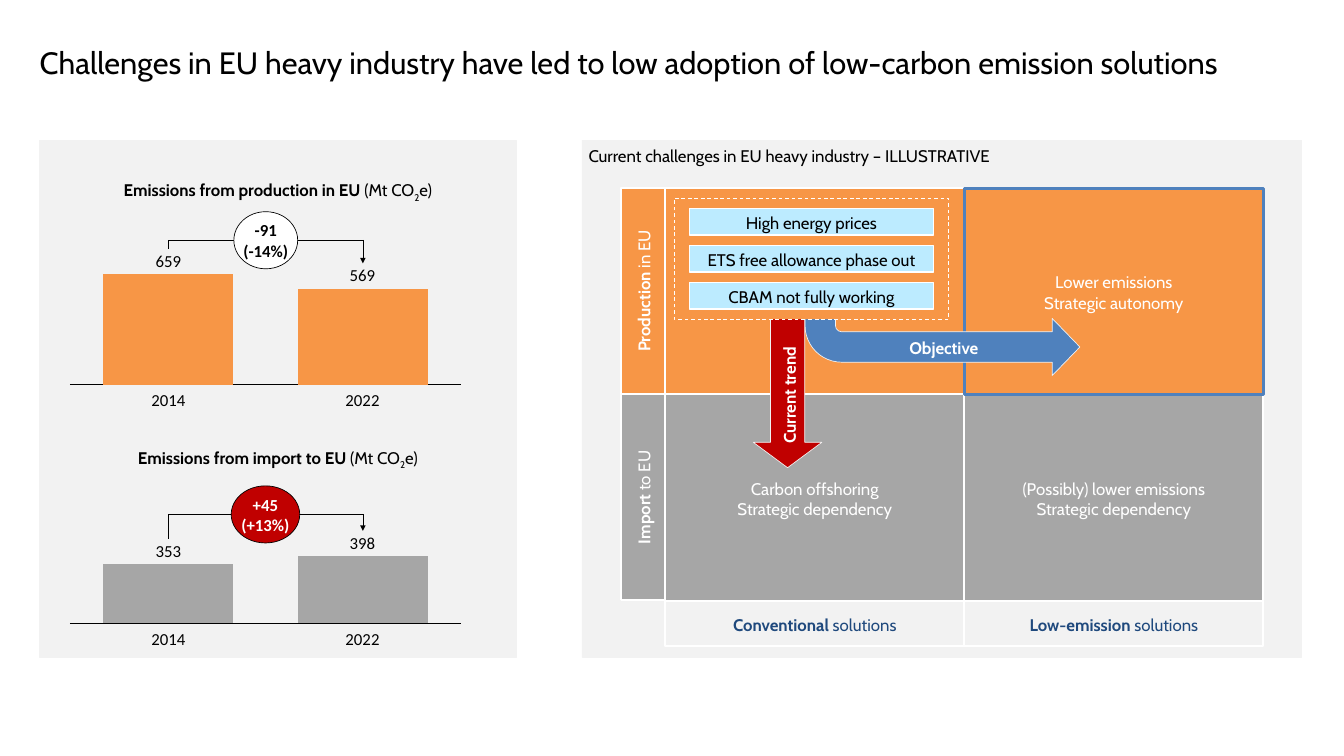
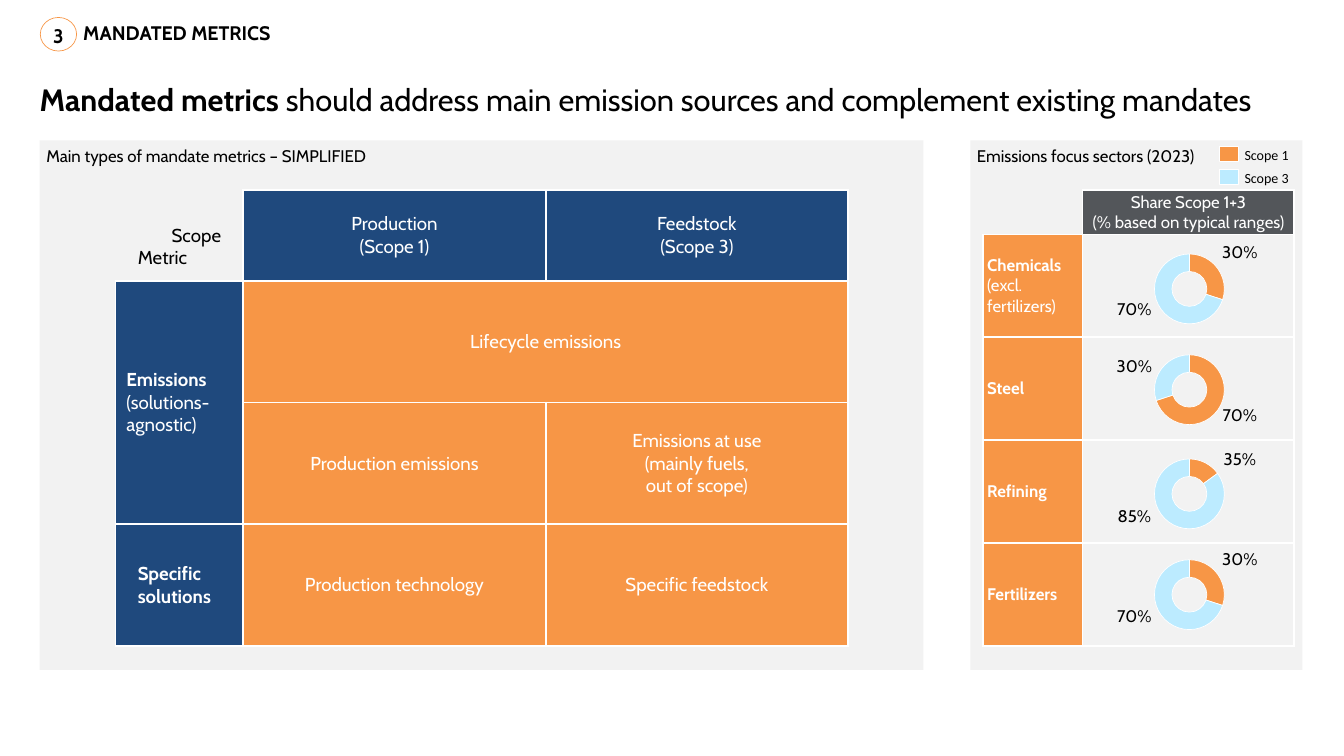
"""Build two slides on emissions in EU heavy industry and on mandated metrics."""
import lxml.etree
import pptx
import pptx.chart.data
import pptx.dml.color
import pptx.enum.chart
import pptx.enum.dml
import pptx.enum.shapes
import pptx.enum.text
import pptx.oxml.ns
import pptx.util

EMU_PER_PX = 9144
RGB = pptx.dml.color.RGBColor
BLACK = RGB(0x00, 0x00, 0x00)
WHITE = RGB(0xFF, 0xFF, 0xFF)
PANEL = RGB(0xF2, 0xF2, 0xF2)
ORANGE = RGB(0xF7, 0x96, 0x46)
GRAY = RGB(0xA6, 0xA6, 0xA6)
DARK_GRAY = RGB(0x53, 0x56, 0x5A)
NAVY = RGB(0x1F, 0x49, 0x7D)
BLUE = RGB(0x4F, 0x81, 0xBD)
SKY = RGB(0xBC, 0xEB, 0xFF)
RED = RGB(0xC0, 0x00, 0x00)
HEADING_FONT = "Cabin"
CHART_FONT = "Calibri"

SHAPE = pptx.enum.shapes.MSO_SHAPE
LEFT = pptx.enum.text.PP_ALIGN.LEFT
CENTER = pptx.enum.text.PP_ALIGN.CENTER
RIGHT = pptx.enum.text.PP_ALIGN.RIGHT
TOP = pptx.enum.text.MSO_ANCHOR.TOP
MIDDLE = pptx.enum.text.MSO_ANCHOR.MIDDLE
BOTTOM = pptx.enum.text.MSO_ANCHOR.BOTTOM
NO_INSETS = (0, 0, 0, 0)
BOX_INSETS = (10, 8, 10, 5)
WIDE_INSETS = (33, 17, 33, 17)


def px(*lengths):
    return [pptx.util.Emu(round(length * EMU_PER_PX)) for length in lengths]


def qn(tag):
    return pptx.oxml.ns.qn(tag)


def write_text(frame, text, size=18, color=BLACK, font=HEADING_FONT, align=LEFT, spacing=None):
    """Write lines as paragraphs; *stars* mark bold and _underscores_ mark subscript."""
    for row, line in enumerate(text.split("\n")):
        para = frame.add_paragraph() if row else frame.paragraphs[0]
        para.alignment = align
        if spacing:
            para.line_spacing = spacing
        for part_number, part in enumerate(line.split("*")):
            for piece_number, piece in enumerate(part.split("_")):
                if not piece:
                    continue
                span = para.add_run()
                span.text = piece
                span.font.size = pptx.util.Pt(size)
                span.font.name = font
                span.font.color.rgb = color
                span.font.bold = part_number % 2 == 1
                if piece_number % 2:
                    span.font._element.set("baseline", "-25000")


def set_insets(holder, insets):
    (holder.margin_left, holder.margin_top,
     holder.margin_right, holder.margin_bottom) = px(*insets)


def set_frame(frame, text, anchor, insets, wrap, **text_format):
    frame.word_wrap = wrap
    frame.vertical_anchor = anchor
    set_insets(frame, insets)
    write_text(frame, text, **text_format)


def add_label(page, place, text, anchor=TOP, insets=(10, 5, 10, 5), wrap=True, turn=0,
              **text_format):
    box = page.shapes.add_textbox(*px(*place))
    box.rotation = turn
    set_frame(box.text_frame, text, anchor, insets, wrap, **text_format)


def add_box(page, place, text="", kind=SHAPE.RECTANGLE, fill=None, line=None, weight=0.75,
            turn=0, anchor=MIDDLE, align=CENTER, insets=BOX_INSETS, wrap=True, **text_format):
    box = page.shapes.add_shape(kind, *px(*place))
    box.shadow.inherit = False
    box.rotation = turn
    if fill is None:
        box.fill.background()
    else:
        box.fill.solid()
        box.fill.fore_color.rgb = fill
    if line is None:
        box.line.fill.background()
    else:
        box.line.color.rgb = line
        box.line.width = pptx.util.Pt(weight)
    if text:
        set_frame(box.text_frame, text, anchor, insets, wrap, align=align, **text_format)
    return box


def add_panel(page, place, text="", line=None):
    add_box(page, place, text, fill=PANEL, line=line, anchor=TOP, align=LEFT)


def add_title(page, text, top):
    add_label(page, (59, top, 1879, 83), text, insets=NO_INSETS, size=33)


def add_line(page, start, end, arrow=False):
    connector = page.shapes.add_connector(
        pptx.enum.shapes.MSO_CONNECTOR.STRAIGHT, *px(*start, *end))
    connector.line.color.rgb = BLACK
    connector.line.width = pptx.util.Pt(0.5)
    properties = connector.element.spPr
    if arrow:
        lxml.etree.SubElement(properties.find(qn("a:ln")), qn("a:tailEnd"), type="triangle")
    lxml.etree.SubElement(properties, qn("a:effectLst"))


def add_chart(page, place, kind, categories, values, plot_place):
    data = pptx.chart.data.CategoryChartData()
    data.categories = categories
    data.add_series("Series 1", values)
    chart = page.shapes.add_chart(kind, *px(*place), data).chart
    chart.has_title = False
    chart.has_legend = False
    chart.font.size = pptx.util.Pt(10)
    chart.font.name = CHART_FONT
    chart.font.color.rgb = BLACK
    area = chart.element.find(".//" + qn("c:plotArea"))
    for old in area.findall(qn("c:layout")):
        area.remove(old)
    layout = lxml.etree.Element(qn("c:layout"))
    manual = lxml.etree.SubElement(layout, qn("c:manualLayout"))
    settings = [("layoutTarget", "inner"), ("xMode", "edge"), ("yMode", "edge"),
                *zip("xywh", plot_place)]
    for name, value in settings:
        lxml.etree.SubElement(manual, qn("c:" + name), val=str(value))
    area.insert(0, layout)
    return chart


def add_bars(page, top, values, highest, color):
    chart = add_chart(page, (92, top, 606, 192), pptx.enum.chart.XL_CHART_TYPE.COLUMN_STACKED,
                      ["1", "2"], values, (0.02, 0.07, 0.96, 0.86))
    plot = chart.plots[0]
    plot.gap_width, plot.overlap, plot.vary_by_categories = 50, 100, False
    fill = plot.series[0].format.fill
    fill.solid()
    fill.fore_color.rgb = color
    scale = chart.value_axis
    scale.minimum_scale, scale.maximum_scale = 0, highest
    scale.has_major_gridlines = False
    scale.visible = False
    axis = chart.category_axis
    axis.tick_label_position = pptx.enum.chart.XL_TICK_LABEL_POSITION.NONE
    axis.major_tick_mark = pptx.enum.chart.XL_TICK_MARK.NONE
    axis.format.line.color.rgb = BLACK
    axis.format.line.width = pptx.util.Pt(0.75)


def add_doughnut(page, top, shares):
    chart = add_chart(page, (1705, top, 130, 130), pptx.enum.chart.XL_CHART_TYPE.DOUGHNUT,
                      ["1", "2", "3"], (shares[0], None, shares[1]), (0.1, 0.1, 0.8, 0.8))
    plot = chart.plots[0]
    plot.has_data_labels = False
    plot.vary_by_categories = False
    for index, color in ((0, ORANGE), (2, SKY)):
        look = plot.series[0].points[index].format
        look.fill.solid()
        look.fill.fore_color.rgb = color
        look.line.color.rgb = WHITE
        look.line.width = pptx.util.Pt(0.75)


def add_emissions(page, heading, heading_top, chart_top, bar_values, highest, bar_color,
                  amounts, bridge, ends, change, oval_width, oval_fill, oval_text):
    add_bars(page, chart_top, bar_values, highest, bar_color)
    first, last = centers = (251, 540)
    add_line(page, (first, ends[0]), (first, bridge))
    add_line(page, (first, bridge), (last, bridge))
    add_line(page, (last, bridge), (last, ends[1]), arrow=True)
    for center, year, amount, end in zip(centers, ("2014", "2022"), amounts, ends):
        add_label(page, (center - 27, chart_top + 186, 53, 30), year, insets=NO_INSETS,
                  wrap=False, align=CENTER, font=CHART_FONT)
        add_label(page, (center - 24, end + 6, 47, 27), amount, BOTTOM, (4, 0, 4, 0),
                  wrap=False, align=CENTER, font=CHART_FONT, spacing=0.9)
    add_box(page, (395 - oval_width // 2, bridge - 42, oval_width, 85), change, SHAPE.OVAL,
            oval_fill, BLACK, insets=NO_INSETS, wrap=False, color=oval_text, font=CHART_FONT)
    add_label(page, (161, heading_top, 505, 40), heading, wrap=False, align=CENTER)


def add_matrix(page):
    left, top, width, height = 990, 280, 445, 307
    cells = [
        (0, 0, "", ORANGE, WHITE),
        (1, 1, "(Possibly) lower emissions\nStrategic dependency", GRAY, WHITE),
        (0, 1, "Carbon offshoring\nStrategic dependency", GRAY, WHITE),
        (0, 2, "*Conventional* solutions", PANEL, NAVY),
        (1, 2, "*Low-emission* solutions", PANEL, NAVY),
    ]
    for column, row, text, fill, color in cells:
        add_box(page, (left + column * width, top + row * height, width,
                       67 if row == 2 else height),
                text, fill=fill, line=WHITE, weight=2.25, color=color)
    for row, text, fill in ((1, "*Import* to EU", GRAY), (0, "*Production* in EU", ORANGE)):
        add_box(page, (803, 400 + row * height, height, 66), text, fill=fill, line=WHITE,
                weight=2.25, turn=270, color=WHITE)
    add_box(page, (left + width, top, width, height), "Lower emissions\nStrategic autonomy",
            fill=ORANGE, line=BLUE, weight=3, color=WHITE)


def add_arrows(page):
    objective = add_box(page, (1198, 426, 409, 133), kind=SHAPE.BENT_ARROW, fill=BLUE, line=PANEL)
    objective.element.spPr.find(qn("a:xfrm")).set("flipV", "1")
    trend = add_box(page, (1121, 445, 102, 251), kind=SHAPE.DOWN_ARROW, fill=RED, line=PANEL)
    for arrow, amounts in ((objective, (0.34, 0.32, 0.31, 0.41)), (trend, (0.5, 0.37))):
        for index, amount in enumerate(amounts):
            arrow.adjustments[index] = amount


def add_grid(page, place, columns, rows):
    table = page.shapes.add_table(len(rows), len(columns), *px(*place)).table
    table.first_row = table.horz_banding = False
    for column, width in zip(table.columns, px(*columns)):
        column.width = width
    for row, height in zip(table.rows, px(*rows)):
        row.height = height
    return table


def fill_cell(cell, text="", fill=None, insets=WIDE_INSETS, anchor=MIDDLE, sides="LRTB",
              **text_format):
    set_insets(cell, insets)
    cell.vertical_anchor = anchor
    if fill is None:
        cell.fill.background()
    else:
        cell.fill.solid()
        cell.fill.fore_color.rgb = fill
    for position, side in enumerate("LRTB"):
        border = lxml.etree.Element(qn("a:ln" + side), w=str(pptx.util.Pt(2.25)))
        paint = lxml.etree.SubElement(
            border, qn("a:solidFill" if side in sides else "a:noFill"))
        if side in sides:
            lxml.etree.SubElement(paint, qn("a:srgbClr"), val=str(WHITE))
        cell._tc.get_or_add_tcPr().insert(position, border)
    write_text(cell.text_frame, text, **text_format)


def add_metrics_table(page):
    table = add_grid(page, (172, 283, 1090, 678), (190, 450, 450), (135, 181, 181, 181))
    fill_cell(table.cell(0, 0), "Scope\nMetric", PANEL, anchor=BOTTOM, sides="RB", size=20)
    table.cell(0, 0).text_frame.paragraphs[0].alignment = RIGHT
    for row, text, insets in ((1, "*Emissions* (solutions-agnostic)", (16, 8, 16, 8)),
                              (2, "", WIDE_INSETS), (3, "*Specific solutions*", WIDE_INSETS)):
        fill_cell(table.cell(row, 0), text, NAVY, insets, size=20, color=WHITE)
    body = [("Production\n(Scope 1)", "Feedstock\n(Scope 3)"),
            ("Lifecycle emissions", ""),
            ("Production emissions", "Emissions at use\n(mainly fuels,\nout of scope)"),
            ("Production technology", "Specific feedstock")]
    for row, texts in enumerate(body):
        for column, text in enumerate(texts, 1):
            fill_cell(table.cell(row, column), text, ORANGE if row else NAVY, size=20,
                      color=WHITE, align=CENTER)
    table.cell(1, 0).merge(table.cell(2, 0))
    table.cell(1, 1).merge(table.cell(1, 2))


def add_sectors(page):
    sectors = [
        ("*Chemicals*\n(excl. fertilizers)", 365, (30, 70), ("30%", 353), ("70%", 438)),
        ("*Steel*", 515, (70, 30), ("70%", 596), ("30%", 524)),
        ("*Refining*", 670, (15, 85), ("35%", 662), ("85%", 747)),
        ("*Fertilizers*", 820, (30, 70), ("30%", 811), ("70%", 896)),
    ]
    insets = (6, 3, 6, 3)
    table = add_grid(page, (1463, 283, 463, 678), (148, 315), (66, 153, 153, 153, 153))
    fill_cell(table.cell(0, 0), sides="RB")
    fill_cell(table.cell(0, 1), "Share Scope 1+3\n(% based on typical ranges)", DARK_GRAY,
              insets, color=WHITE, align=CENTER)
    for row, (name, top, shares, right, left) in enumerate(sectors, 1):
        fill_cell(table.cell(row, 0), name, ORANGE, insets, color=WHITE)
        fill_cell(table.cell(row, 1), fill=PANEL)
        add_doughnut(page, top, shares)
        for x, (share, y) in ((1801, right), (1644, left)):
            add_label(page, (x, y, 88, 42), share, insets=(6, 6, 6, 6), align=CENTER)
    for row, (name, color) in enumerate((("Scope 1", ORANGE), ("Scope 3", SKY))):
        top = 218 + row * 34
        add_box(page, (1814, top, 29, 22), fill=color, line=WHITE)
        add_label(page, (1852, top, 66, 25), name, MIDDLE, NO_INSETS, wrap=False, size=15,
                  font=CHART_FONT)


def build_challenges(page):
    add_title(page, "Challenges in EU heavy industry have led to low adoption of "
                    "low-carbon emission solutions", 65)
    add_panel(page, (866, 209, 1071, 769),
              "Current challenges in EU heavy industry – ILLUSTRATIVE", PANEL)
    add_panel(page, (59, 209, 709, 769), line=PANEL)
    add_emissions(page, "*Emissions from production in EU* (Mt CO_2_e)", 263, 394, (100, 86), 100,
                  ORANGE, ("659", "569"), 357, (370, 392), "*-91*\n*(-14%)*", 95, WHITE, BLACK)
    add_emissions(page, "*Emissions from import to EU* (Mt CO_2_e)", 661, 749, (89, 100), 166,
                  GRAY, ("353", "398"), 765, (802, 790), "*+45*\n*(+13%)*", 102, RED, WHITE)
    add_matrix(page)
    add_arrows(page)
    frame = add_box(page, (1003, 295, 409, 180), fill=ORANGE, line=WHITE, weight=1)
    frame.line.dash_style = pptx.enum.dml.MSO_LINE.DASH
    hurdles = ("High energy prices", "ETS free allowance phase out", "CBAM not fully working")
    for row, hurdle in enumerate(hurdles):
        add_box(page, (1026, 310 + row * 55, 363, 40), hurdle, fill=SKY, line=WHITE, weight=1.5)
    add_label(page, (1072, 548, 205, 40), "*Current trend*", MIDDLE, turn=270, color=WHITE)
    add_label(page, (1302, 498, 205, 40), "*Objective*", MIDDLE, color=WHITE, align=CENTER)


def build_metrics(page):
    add_title(page, "*Mandated metrics* should address main emission sources and "
                    "complement existing mandates", 120)
    add_panel(page, (59, 209, 1315, 788), "Main types of mandate metrics – SIMPLIFIED")
    add_metrics_table(page)
    add_label(page, (114, 26, 301, 45), "*MANDATED METRICS*", wrap=False, size=21)
    add_box(page, (60, 26, 54, 50), "*3*", SHAPE.OVAL, line=ORANGE, size=21)
    add_panel(page, (1444, 209, 494, 788), "Emissions focus sectors (2023)")
    add_sectors(page)


def main():
    deck = pptx.Presentation()
    deck.slide_width, deck.slide_height = px(2000, 1125)
    for build in (build_challenges, build_metrics):
        build(deck.slides.add_slide(deck.slide_layouts[6]))
    deck.save("out.pptx")


if __name__ == "__main__":
    main()
